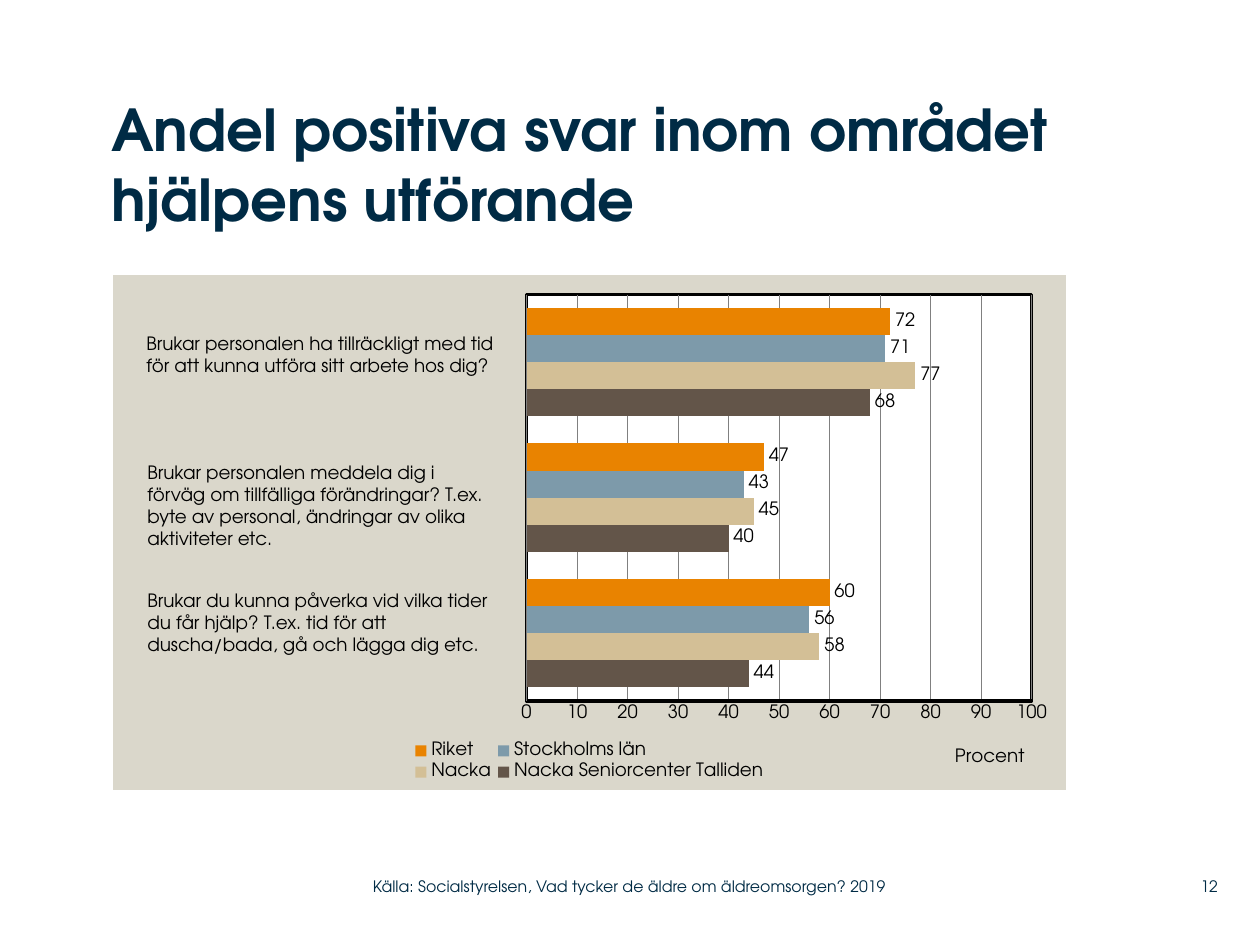
from dataclasses import dataclass

from lxml.etree import fromstring
from pptx import Presentation
from pptx.chart.data import CategoryChartData
from pptx.dml.color import RGBColor
from pptx.enum.chart import (XL_CHART_TYPE, XL_LABEL_POSITION,
                             XL_LEGEND_POSITION, XL_TICK_MARK)
from pptx.enum.text import MSO_ANCHOR, MSO_AUTO_SIZE, PP_ALIGN
from pptx.oxml.ns import nsdecls, qn
from pptx.util import Emu, Pt

PX = 914400 / 126


@dataclass(frozen=True)
class Theme:
    font: str = "TeX Gyre Adventor"
    navy: str = "002B45"
    black: str = "000000"
    white: str = "FFFFFF"
    panel: str = "DAD7CB"
    grid: str = "808080"
    head: float = 33
    text: float = 10.5
    foot: float = 9


@dataclass(frozen=True)
class Box:
    left: int
    top: int
    width: int
    height: int

    def emu(self) -> list[Emu]:
        return [px(n) for n in (self.left, self.top, self.width, self.height)]


@dataclass(frozen=True)
class Label:
    box: Box
    lines: tuple[str, ...]


@dataclass(frozen=True)
class Group:
    name: str
    color: str
    values: tuple[int, ...]


THEME = Theme()

QUESTIONS = [
    Label(Box(134, 326, 377, 57), (
        "Brukar personalen ha tillräckligt med tid",
        "för att kunna utföra sitt arbete hos dig?")),
    Label(Box(135, 455, 374, 102), (
        "Brukar personalen meddela dig i förväg om tillfälliga förändringar? "
        "T.ex. byte av personal, ändringar av olika aktiviteter etc.",)),
    Label(Box(135, 583, 374, 79), (
        "Brukar du kunna påverka vid vilka tider",
        "du får hjälp? T.ex. tid för att",
        "duscha/bada, gå och lägga dig etc.")),
]

GROUPS = [
    Group("Nacka Seniorcenter Talliden", "635549", (44, 40, 68)),
    Group("Nacka", "D3BF96", (58, 45, 77)),
    Group("Stockholms län", "7D9AAA", (56, 43, 71)),
    Group("Riket", "E98300", (60, 47, 72)),
]


def px(n: int) -> Emu:
    return Emu(round(n * PX))


def rgb(code: str) -> RGBColor:
    return RGBColor.from_string(code)


def style(font, size: float, color: str, bold: bool = False) -> None:
    font.name = THEME.font
    font.size = Pt(size)
    font.bold = bold
    font.color.rgb = rgb(color)


def write(frame, lines: tuple[str, ...], size: float, color: str,
          bold: bool = False, align=PP_ALIGN.LEFT) -> None:
    frame.word_wrap = True
    for i, line in enumerate(lines):
        para = frame.add_paragraph() if i else frame.paragraphs[0]
        para.alignment = align
        run = para.add_run()
        run.text = line
        style(run.font, size, color, bold)


def trim(frame, anchor) -> None:
    frame.margin_left = frame.margin_right = 0
    frame.margin_top = frame.margin_bottom = 0
    frame.auto_size = MSO_AUTO_SIZE.NONE
    frame.vertical_anchor = anchor


def add_head(slide, box: Box, text: str) -> None:
    title = slide.shapes.title
    title.left, title.top, title.width, title.height = box.emu()
    trim(title.text_frame, MSO_ANCHOR.TOP)
    write(title.text_frame, (text,), THEME.head, THEME.navy, bold=True)


def add_label(slide, label: Label) -> None:
    frame = slide.shapes.add_textbox(*label.box.emu()).text_frame
    write(frame, label.lines, THEME.text, THEME.black)
    frame.auto_size = MSO_AUTO_SIZE.SHAPE_TO_FIT_TEXT


def add_foot(slide, box: Box, text: str, align=PP_ALIGN.LEFT) -> None:
    frame = slide.shapes.add_textbox(*box.emu()).text_frame
    trim(frame, MSO_ANCHOR.MIDDLE)
    write(frame, (text,), THEME.foot, THEME.navy, align=align)


def place(node, index: int, inner: bool = False, **spot: float) -> None:
    """Give a chart part a manual layout, as fractions of the chart."""
    for old in node.findall(qn("c:layout")):
        node.remove(old)
    target = '<c:layoutTarget val="inner"/>' if inner else ""
    modes = '<c:xMode val="edge"/><c:yMode val="edge"/>'
    sizes = "".join(f'<c:{key} val="{val}"/>' for key, val in spot.items())
    node.insert(index, fromstring(
        f'<c:layout {nsdecls("c")}><c:manualLayout>{target}{modes}{sizes}'
        '</c:manualLayout></c:layout>'))


def area(fill: str, line: str = "", width: int = 0):
    """Make the fill and border of a chart part."""
    paint = '<a:solidFill><a:srgbClr val="{}"/></a:solidFill>'
    edge = (f'<a:ln w="{width}">{paint.format(line)}</a:ln>' if line
            else '<a:ln><a:noFill/></a:ln>')
    return fromstring(f'<c:spPr {nsdecls("c", "a")}>'
                      f'{paint.format(fill)}{edge}</c:spPr>')


def add_bars(slide, box: Box) -> None:
    data = CategoryChartData(number_format="0")
    data.categories = ["1", "2", "3"]
    for group in GROUPS:
        data.add_series(group.name, group.values)
    chart = slide.shapes.add_chart(
        XL_CHART_TYPE.BAR_CLUSTERED, *box.emu(), data).chart
    chart.has_title = False
    style(chart.font, THEME.text, THEME.black)

    # Bars and their values
    plot = chart.plots[0]
    plot.gap_width, plot.overlap, plot.vary_by_categories = 100, 0, False
    for group, bars in zip(GROUPS, plot.series):
        bars.format.fill.solid()
        bars.format.fill.fore_color.rgb = rgb(group.color)
        marks = bars.data_labels
        marks.show_value = True
        marks.position = XL_LABEL_POSITION.OUTSIDE_END
        style(marks.font, THEME.text, THEME.black)

    # Axes
    chart.category_axis.visible = False
    axis = chart.value_axis
    axis.minimum_scale, axis.maximum_scale, axis.major_unit = 0, 100, 10
    axis.major_tick_mark = axis.minor_tick_mark = XL_TICK_MARK.NONE
    axis.format.line.color.rgb = rgb(THEME.black)
    axis.format.line.width = Pt(2)
    grid = axis.major_gridlines.format.line
    grid.color.rgb = rgb(THEME.grid)
    grid.width = Pt(0.5)
    style(axis.tick_labels.font, THEME.text, THEME.black)
    write(axis.axis_title.text_frame, ("Procent",), THEME.text, THEME.black)
    place(axis.axis_title._element, 1, x=0.88, y=0.91)

    # Legend
    chart.has_legend = True
    chart.legend.position = XL_LEGEND_POSITION.BOTTOM
    chart.legend.include_in_layout = False
    style(chart.legend.font, THEME.text, THEME.black)
    place(chart.legend._element, 1, x=0.31, y=0.9, w=0.38, h=0.09)

    # Backgrounds
    root = chart._chartSpace.find(qn("c:chart"))
    root.addnext(area(THEME.panel))
    field = root.find(qn("c:plotArea"))
    place(field, 0, inner=True, x=0.434, y=0.038, w=0.53, h=0.789)
    field.append(area(THEME.white, THEME.black, Pt(2)))


def main() -> None:
    deck = Presentation()
    deck.slide_width, deck.slide_height = px(1260), px(945)
    slide = deck.slides.add_slide(deck.slide_layouts[5])
    add_bars(slide, Box(113, 275, 953, 515))
    add_head(slide, Box(111, 94, 958, 179),
             "Andel positiva svar inom området hjälpens utförande")
    for label in QUESTIONS:
        add_label(slide, label)
    add_foot(slide, Box(1159, 868, 59, 37), "12", PP_ALIGN.RIGHT)
    add_foot(slide, Box(373, 868, 558, 37),
             "Källa: Socialstyrelsen, Vad tycker de äldre om äldreomsorgen? 2019")
    deck.save("out.pptx")


if __name__ == "__main__":
    main()
